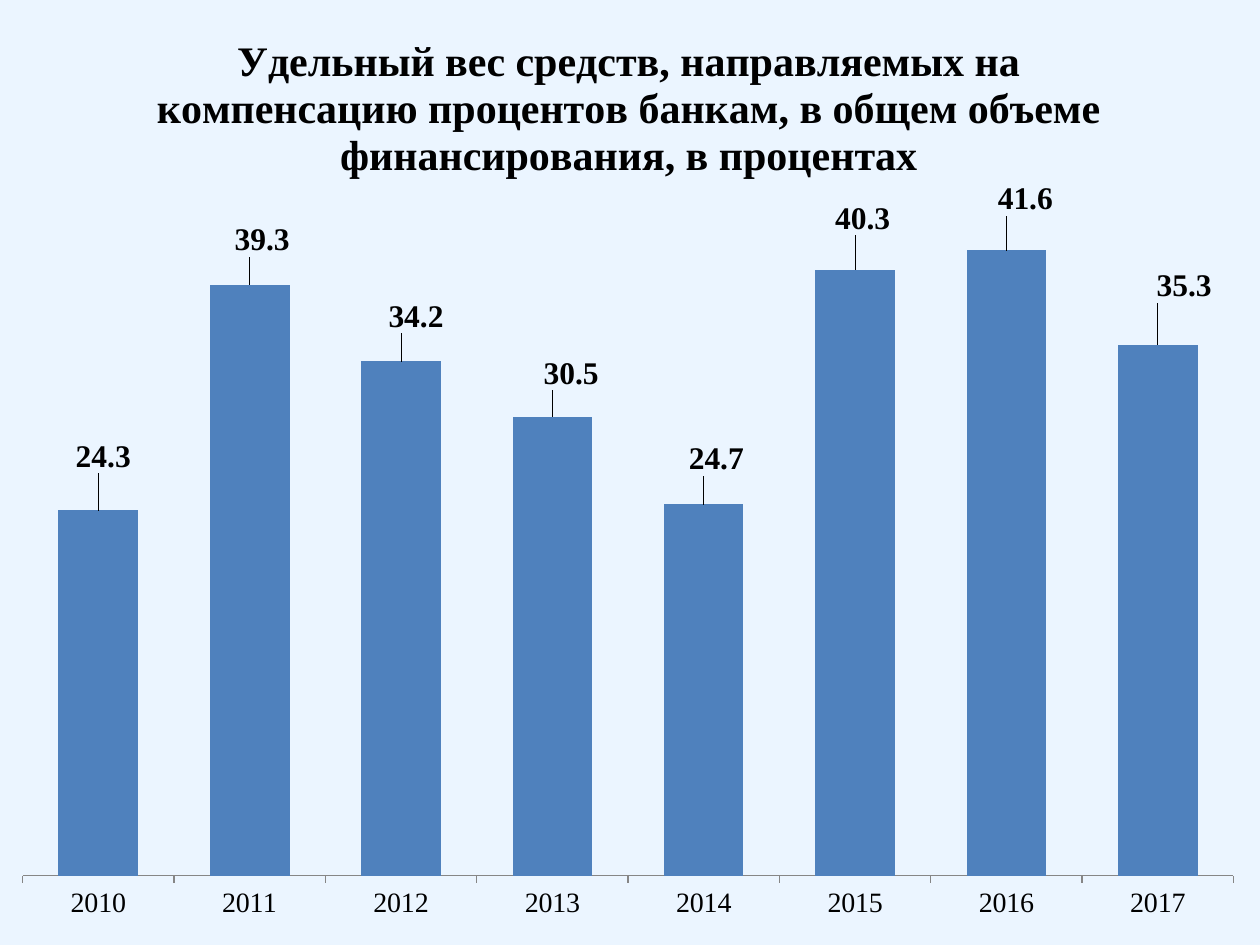
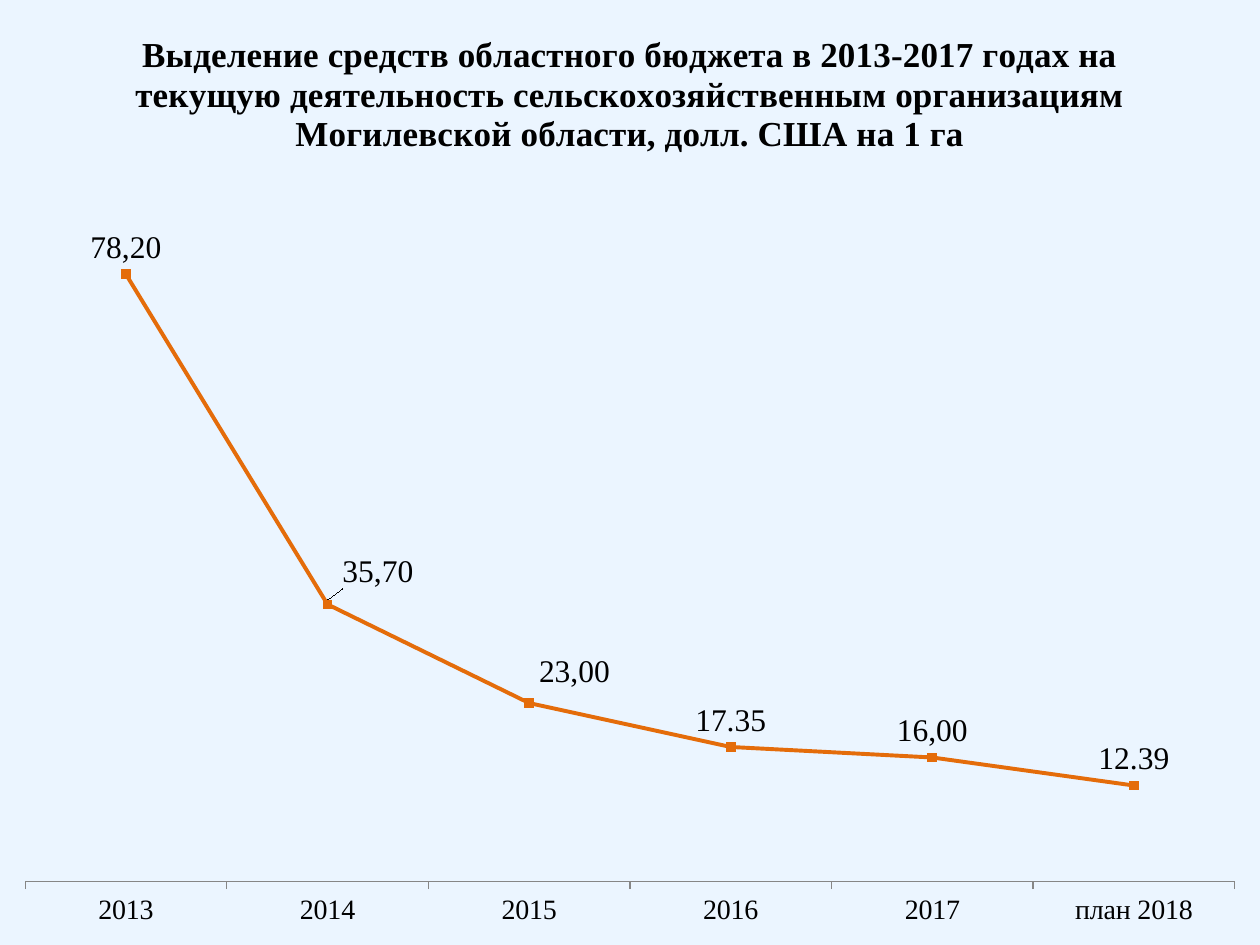
from dataclasses import dataclass

from lxml.etree import SubElement
from pptx import Presentation
from pptx.chart.data import CategoryChartData
from pptx.dml.color import RGBColor
from pptx.enum.chart import (XL_CHART_TYPE, XL_LABEL_POSITION,
                             XL_MARKER_STYLE, XL_TICK_LABEL_POSITION, XL_TICK_MARK)
from pptx.oxml import parse_xml
from pptx.oxml.ns import nsdecls, qn
from pptx.util import Inches, Pt


@dataclass(frozen=True)
class Theme:
    """Colours, fonts and type sizes of the deck."""
    back: str = "EBF5FF"
    ink: str = "000000"
    axis: str = "868686"
    bar: str = "4F81BD"
    line: str = "E46C0A"
    base: str = "Calibri"
    serif: str = "Times New Roman"
    small: int = 10
    tick: int = 16
    label: int = 18
    minor: int = 20
    major: int = 24


THEME = Theme()


def tint(fill, color):
    """Make a fill solid in one colour."""
    fill.solid()
    fill.fore_color.rgb = RGBColor.from_string(color)


def style(font, size, bold=False, name=THEME.serif, color=THEME.ink):
    """Set the look of a font."""
    font.size, font.bold, font.name = Pt(size), bold, name
    font.color.rgb = RGBColor.from_string(color)


def write(frame, text, **look):
    """Put formatted text in a text frame."""
    run = frame.paragraphs[0].add_run()
    run.text = text
    style(run.font, **look)


def layout(frame, inner=False, **place):
    """Build a manual chart layout from inches within the frame."""
    node = parse_xml(f"<c:layout {nsdecls('c')}><c:manualLayout/></c:layout>")
    if inner:
        SubElement(node[0], qn("c:layoutTarget"), val="inner")
        for key in "xy":
            SubElement(node[0], qn(f"c:{key}Mode"), val="edge")
    for key, span in place.items():
        side = frame.width if key in "xw" else frame.height
        SubElement(node[0], qn(f"c:{key}"), val=f"{Inches(span) / side:.5f}")
    return node


def add_chart(deck, kind, box, title, size, points, top):
    """Add a slide that holds one titled chart without a value axis."""
    slide = deck.slides.add_slide(deck.slide_layouts[6])
    tint(slide.background.fill, THEME.back)
    data = CategoryChartData()
    data.categories = list(points)
    data.add_series("Series 1", list(points.values()))
    frame = slide.shapes.add_chart(kind, *map(Inches, box), data)
    chart = frame.chart
    style(chart.font, THEME.small, name=THEME.base)
    chart.has_legend = False
    chart.has_title = True
    write(chart.chart_title.text_frame, title, size=size, bold=True)
    scale = chart.value_axis
    scale.minimum_scale, scale.maximum_scale = 0, top
    scale.has_major_gridlines = scale.visible = False
    axis = chart.category_axis
    axis.has_major_gridlines = False
    axis.major_tick_mark = XL_TICK_MARK.OUTSIDE
    axis.minor_tick_mark = XL_TICK_MARK.NONE
    axis.tick_label_position = XL_TICK_LABEL_POSITION.LOW
    style(axis.tick_labels.font, THEME.tick)
    tint(axis.format.line.fill, THEME.axis)
    chart.plots[0].vary_by_categories = False
    return frame


def set_plot(frame, **place):
    """Fix the inner plot area of a chart."""
    area = frame.chart.plots[0]._element.getparent()
    for old in area.findall(qn("c:layout")):
        area.remove(old)
    area.insert(0, layout(frame, inner=True, **place))


def set_labels(series, spot, bold=False):
    """Show the values of a series as labels."""
    labels = series.data_labels
    labels.show_value = True
    labels.position = spot
    style(labels.font, THEME.label, bold)


def move_label(frame, index, right, up, spot, text=None, bold=False):
    """Shift one label from its spot and optionally replace its text."""
    series = frame.chart.plots[0].series[0]
    label = series.points[index].data_label
    if text:
        write(label.text_frame, text, size=THEME.label, bold=bold)
    else:
        style(label.font, THEME.label, bold)
    label.position = spot
    mark = series._element.xpath(f"c:dLbls/c:dLbl/c:idx[@val='{index}']")[0]
    if right or up:
        mark.addnext(layout(frame, x=right, y=-up))


def add_share(deck):
    """Build the column chart of interest compensation shares."""
    values = [24.3, 39.3, 34.2, 30.5, 24.7, 40.3, 41.6, 35.3]
    points = {str(2010 + step): value for step, value in enumerate(values)}
    frame = add_chart(
        deck, XL_CHART_TYPE.COLUMN_CLUSTERED, (-0.02, 0, 10.02, 7.45),
        "Удельный вес средств, направляемых на компенсацию процентов банкам, "
        "в общем объеме финансирования, в процентах",
        THEME.major, points, 45)
    set_plot(frame, x=0.2, y=1.58, w=9.61, h=5.37)
    plot = frame.chart.plots[0]
    plot.gap_width = 90
    series = plot.series[0]
    tint(series.format.fill, THEME.bar)
    spot = XL_LABEL_POSITION.OUTSIDE_END
    set_labels(series, spot, bold=True)
    shifts = [(0.04, 0.25), (0.1, 0.18), (0.12, 0.18), (0.15, 0.17),
              (0.1, 0.18), (0.06, 0.23), (0.15, 0.23), (0.21, 0.29)]
    for index, (right, up) in enumerate(shifts):
        move_label(frame, index, right, up, spot, bold=True)


def add_budget(deck):
    """Build the line chart of budget funds per hectare."""
    points = {"2013": 78.2, "2014": 35.7, "2015": 23, "2016": 17.35,
              "2017": 16, "план 2018": 12.39}
    frame = add_chart(
        deck, XL_CHART_TYPE.LINE_MARKERS, (0, 0, 10, 7.5),
        "Выделение средств областного бюджета в 2013-2017 годах на текущую "
        "деятельность сельскохозяйственным организациям Могилевской области, "
        "долл. США на 1 га",
        THEME.minor, points, 90)
    set_plot(frame, x=0.2, y=1.45, w=9.6, h=5.55)
    series = frame.chart.plots[0].series[0]
    series.smooth = False
    tint(series.format.line.fill, THEME.line)
    series.format.line.width = Pt(2.25)
    series.marker.style, series.marker.size = XL_MARKER_STYLE.SQUARE, 5
    tint(series.marker.format.fill, THEME.line)
    series.marker.format.line.fill.background()
    spot = XL_LABEL_POSITION.ABOVE
    set_labels(series, spot)
    texts = [(0, 0, 0, "78,20"), (1, 0.4, 0.05, "35,70"),
             (2, 0.36, 0.04, "23,00"), (4, 0, 0, "16,00")]
    for index, right, up, text in texts:
        move_label(frame, index, right, up, spot, text)


def main():
    """Build and save the deck."""
    deck = Presentation()
    deck.slide_width, deck.slide_height = Inches(10), Inches(7.5)
    add_share(deck)
    add_budget(deck)
    deck.save("out.pptx")


if __name__ == "__main__":
    main()
